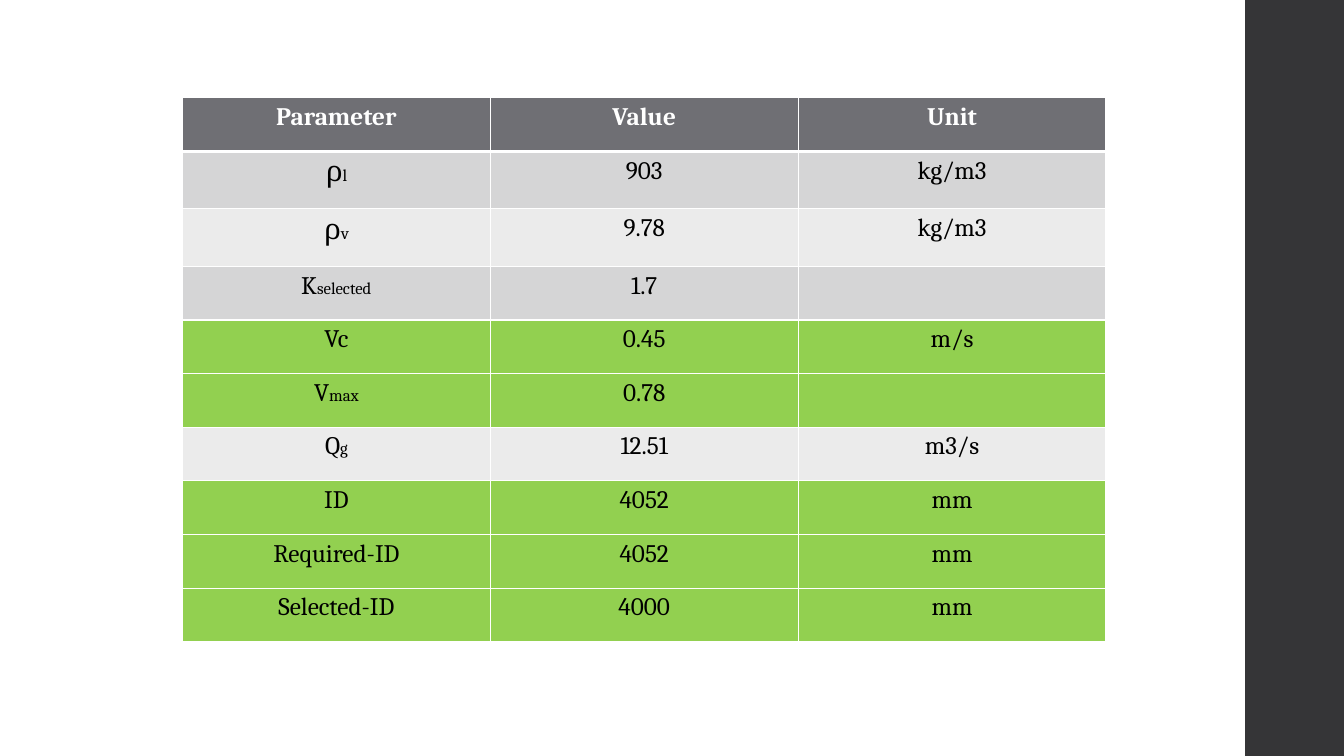
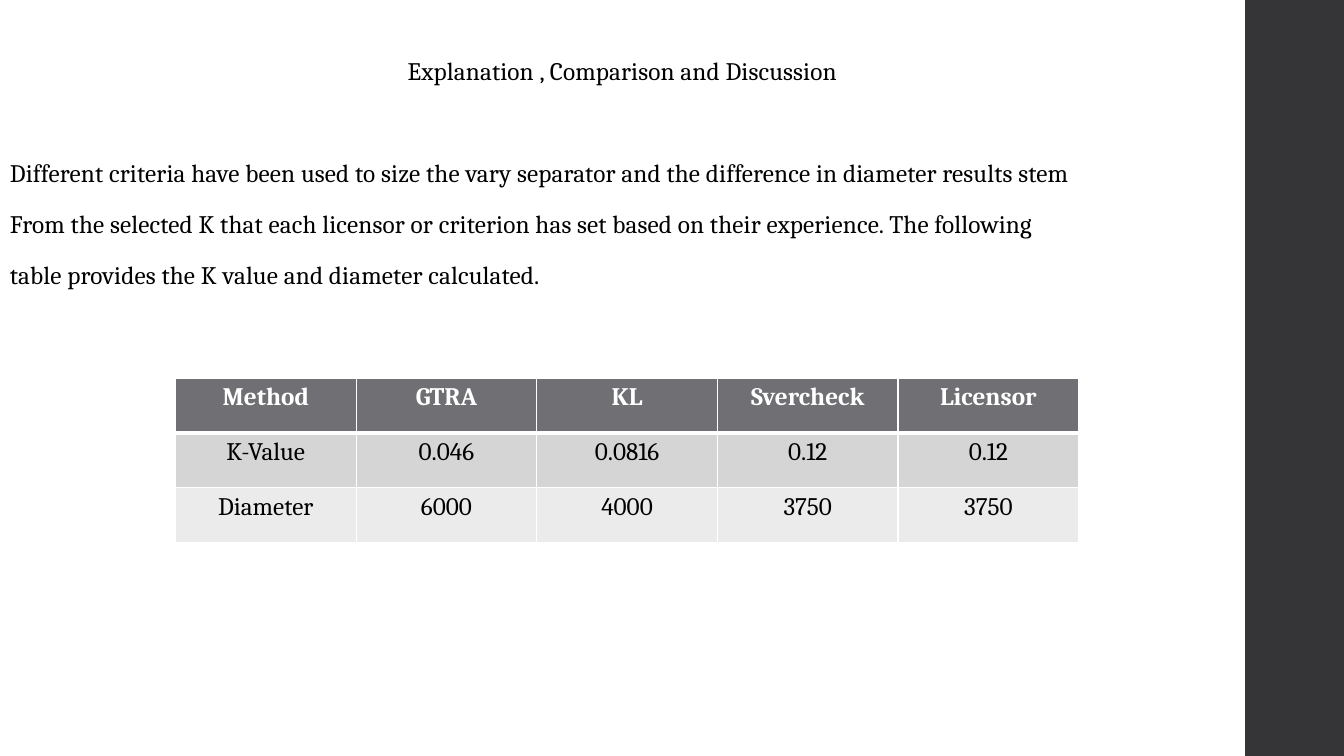
from dataclasses import dataclass

from lxml.etree import SubElement
from pptx import Presentation
from pptx.dml.color import RGBColor as RGB
from pptx.enum.shapes import MSO_SHAPE as SHAPE
from pptx.enum.text import MSO_ANCHOR as ANCHOR, PP_ALIGN as ALIGN
from pptx.oxml.ns import qn
from pptx.util import Inches, Pt


@dataclass(frozen=True)
class Theme:
    font: str = "Cambria"
    text: str = "000000"
    white: str = "FFFFFF"
    band: str = "353537"
    header: str = "6F6F74"
    dark_row: str = "D5D5D6"
    light_row: str = "EBEBEB"
    result_row: str = "92D050"
    body_size: int = 18
    symbol_size: int = 20
    sub_size: int = 12
    rule: int = 1
    header_rule: int = 3


THEME = Theme()
SLIDE_W, SLIDE_H = Inches(13.33), Inches(7.5)
CONTENT_W = Inches(12.35)
TITLE_ONLY, BLANK = 5, 6


def subscripted(base, sub, size=THEME.body_size):
    return [(base, size), (sub, THEME.sub_size)]


class Deck:
    def __init__(self, theme):
        self.theme = theme
        self.prs = Presentation()
        self.prs.slide_width, self.prs.slide_height = SLIDE_W, SLIDE_H
        self.s = None

    def slide(self, title=None):
        layout = self.prs.slide_layouts[BLANK if title is None else TITLE_ONLY]
        self.s = self.prs.slides.add_slide(layout)
        self.side_band()
        if title is not None:
            self.title(title)

    def side_band(self):
        sp = self.s.shapes.add_shape(SHAPE.RECTANGLE, CONTENT_W, 0,
                                     SLIDE_W - CONTENT_W, SLIDE_H)
        sp.shadow.inherit = False
        sp.fill.solid()
        sp.fill.fore_color.rgb = RGB.from_string(self.theme.band)
        sp.line.fill.background()

    def title(self, text):
        sp = self.s.shapes.title
        sp.left, sp.top, sp.width, sp.height = 0, Inches(0.45), CONTENT_W, Inches(0.53)
        tf = sp.text_frame
        tf.text = text
        tf.vertical_anchor = ANCHOR.MIDDLE
        p = tf.paragraphs[0]
        p.alignment = ALIGN.CENTER
        self.style_prose(p)

    def body(self, lines, left, top, width, height):
        tf = self.s.shapes.add_textbox(left, top, width, height).text_frame
        tf.word_wrap = True
        tf.text = "\n".join(lines)
        for p in tf.paragraphs:
            p.space_before, p.space_after = Pt(14), Pt(2)
            self.style_prose(p)

    def style_prose(self, p):
        """Format running text, with its slightly open letter spacing."""
        p.line_spacing = 0.95
        for r in p.runs:
            self.style_run(r)
            r.font._element.set("spc", "10")

    def style_run(self, r, size=None, color=None, bold=False):
        r.font.name = self.theme.font
        r.font.size = Pt(size or self.theme.body_size)
        r.font.bold = bold
        r.font.color.rgb = RGB.from_string(color or self.theme.text)

    def table(self, rows, left, top, width, height, result_rows=(), row_heights=None):
        """Add a table; rows without a height in row_heights share the rest."""
        fixed = row_heights or {}
        shared = (height - sum(fixed.values())) // (len(rows) - len(fixed))
        table = self.s.shapes.add_table(len(rows), len(rows[0]),
                                        left, top, width, height).table
        table.horz_banding = False
        for col in table.columns:
            col.width = width // len(rows[0])
        for i, row in enumerate(rows):
            table.rows[i].height = fixed.get(i, shared)
            for j, content in enumerate(row):
                self.cell(table.cell(i, j), content, i, i in result_rows)

    def cell(self, cell, content, row, is_result):
        th = self.theme
        is_header = row == 0
        if is_header:
            fill = th.header
        elif is_result:
            fill = th.result_row
        else:
            fill = th.dark_row if row % 2 else th.light_row
        self.borders(cell, top=th.header_rule if row == 1 else th.rule,
                     bottom=th.header_rule if is_header else th.rule)
        cell.fill.solid()
        cell.fill.fore_color.rgb = RGB.from_string(fill)
        p = cell.text_frame.paragraphs[0]
        p.alignment = ALIGN.CENTER
        p.font.size = Pt(th.body_size)
        runs = [(content, th.body_size)] if isinstance(content, str) else content
        for text, size in runs:
            if text:
                r = p.add_run()
                r.text = text
                self.style_run(r, size, th.white if is_header else th.text, is_header)

    def borders(self, cell, top, bottom):
        tc_pr = cell._tc.get_or_add_tcPr()
        side = self.theme.rule
        for tag, width in (("lnL", side), ("lnR", side), ("lnT", top), ("lnB", bottom)):
            ln = SubElement(tc_pr, qn(f"a:{tag}"), w=str(Pt(width)))
            fill = SubElement(ln, qn("a:solidFill"))
            SubElement(fill, qn("a:srgbClr"), val=self.theme.white)


PARAMETERS = [
    ("Parameter", "Value", "Unit"),
    (subscripted("ρ", "l", THEME.symbol_size), "903", "kg/m3"),
    (subscripted("ρ", "v", THEME.symbol_size), "9.78", "kg/m3"),
    (subscripted("K", "selected"), "1.7", ""),
    ("Vc", "0.45", "m/s"),
    (subscripted("V", "max"), "0.78", ""),
    (subscripted("Q", "g"), "12.51", "m3/s"),
    ("ID", "4052", "mm"),
    ("Required-ID", "4052", "mm"),
    ("Selected-ID", "4000", "mm"),
]

METHODS = [
    ("Method", "GTRA", "KL", "Svercheck", "Licensor"),
    ("K-Value", "0.046", "0.0816", "0.12", "0.12"),
    ("Diameter", "6000", "4000", "3750", "3750"),
]

DISCUSSION = [
    "Different criteria have been used to size the vary separator and the difference in diameter results stem",
    "From the selected K that each licensor or criterion has set based on their experience. The following",
    "table provides the K value and diameter calculated.",
]


def main():
    deck = Deck(THEME)

    deck.slide()
    deck.table(PARAMETERS, Inches(1.81), Inches(0.97), Inches(9.16), Inches(5.4),
               result_rows={4, 5, 7, 8, 9},
               row_heights={1: Inches(0.57), 2: Inches(0.57)})

    deck.slide("Explanation , Comparison and Discussion")
    deck.body(DISCUSSION, 0, Inches(1.53), CONTENT_W, Inches(1.5))
    deck.table(METHODS, Inches(1.74), Inches(3.75), Inches(8.96), Inches(1.63))

    deck.prs.save("out.pptx")


if __name__ == "__main__":
    main()
